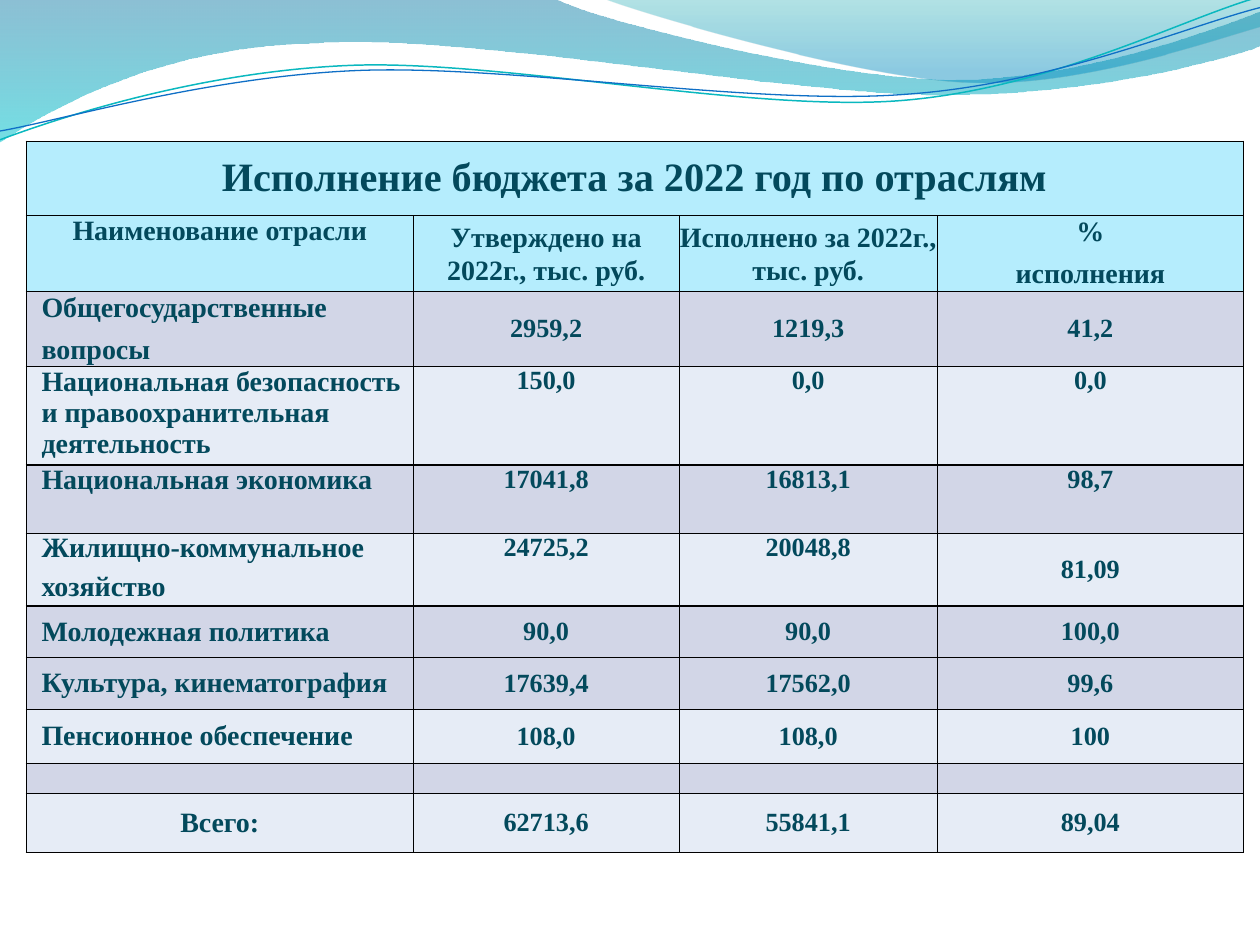
import math

from lxml import etree
from pptx import Presentation
from pptx import util as u
from pptx.dml.color import RGBColor
from pptx.enum import text
from pptx.oxml import ns

COLORS = {"ink": "03495C", "header": "B5EDFD", "dark": "D2D6E7", "light": "E6ECF6", "border": "000000"}
FONT = "Times New Roman"

WAVES = [
    {"box": (-0.01, -0.01, 10.02, 1.14), "start": (0, 0),
     "gradient": [(0, "0074A1", 45), (100, "00C6CF", 55)],
     "segments": [(4.4, -0.01), (4.76, 0.17, 6.64, 0.63, 7.58, 0.63), (8.53, 0.63, 9.58, 0.26, 10, 0.09),
                  (10.01, 0.36), (9.83, 0.44, 8.7, 0.76, 7.46, 0.75), (6.22, 0.75, 3.82, 0.28, 2.57, 0.34),
                  (1.29, 0.36, 0.46, 0.83, -0.01, 1.13), (0, 0)]},
    {"box": (4.79, -0.01, 5.21, 0.7), "start": (4.79, -0.01),
     "gradient": [(0, "00A1A9", 30), (80, "008BBF", 45)],
     "segments": [(5.09, 0.11, 6.82, 0.62, 7.69, 0.65), (8.56, 0.69, 9.61, 0.32, 10, 0.21),
                  (10, 0), (4.79, -0.01)]},
    {"box": (-0.02, 0.22, 10.02, 0.71), "start": (0, 1.11), "line": ("0AB8BF", 0.85), "rotation": -2.7,
     "segments": [(0.48, 0.93, 1.58, 0.57, 2.77, 0.52), (3.95, 0.47, 5.93, 0.89, 7.13, 0.8),
                  (8.33, 0.71, 9.38, 0.15, 9.98, -0.02)]},
    {"box": (-0.02, 0.3, 10.03, 0.58), "start": (0, 1.04), "line": ("0F6FC6", 0.75), "rotation": -2.7,
     "segments": [(0.47, 0.96, 1.64, 0.61, 2.83, 0.56), (4.03, 0.51, 5.97, 0.84, 7.17, 0.75),
                  (8.36, 0.67, 9.41, 0.21, 10, 0.06)]},
]

TABLE_BOX = (0.21, 1.12, 9.65, 5.74)
COLUMN_WIDTHS = [3.07, 2.11, 2.05, 2.43]
ROWS = [
    (0.59, "header", ["Исполнение бюджета за 2022 год по отраслям", "", "", ""]),
    (0.6, "header", ["Наименование отрасли", "Утверждено на 2022г., тыс. руб.",
                     "Исполнено за 2022г., тыс. руб.", "%\nисполнения"]),
    (0.6, "dark", ["Общегосударственные\nвопросы", "2959,2", "1219,3", "41,2"]),
    (0.78, "light", ["Национальная безопасность и правоохранительная деятельность", "150,0", "0,0", "0,0"]),
    (0.54, "dark", ["Национальная экономика", "17041,8", "16813,1", "98,7"]),
    (0.58, "light", ["Жилищно-коммунальное\nхозяйство", "24725,2", "20048,8", "81,09"]),
    (0.41, "dark", ["Молодежная политика", "90,0", "90,0", "100,0"]),
    (0.41, "dark", ["Культура, кинематография", "17639,4", "17562,0", "99,6"]),
    (0.43, "light", ["Пенсионное обеспечение", "108,0", "108,0", "100"]),
    (0.05, "dark", ["", "", "", ""]),
    (0.47, "light", ["Всего:", "62713,6", "55841,1", "89,04"]),
]
LAST_ROW, LAST_COLUMN = len(ROWS) - 1, len(COLUMN_WIDTHS) - 1
TOP_CELLS = {(1, 0)} | {(row, column) for row in (3, 4, 5) for column in range(4)} - {(5, 3)}
THICK_RULES = {4, 6, 7, len(ROWS)}
SPACE_AFTER = {1: 6.3, 2: 6.3, 5: 4.2}


def rgb(name):
    return RGBColor.from_string(COLORS.get(name, name))


def element(parent, tag, **attributes):
    return etree.SubElement(parent, ns.qn(tag), {key: str(value) for key, value in attributes.items()})


def local_points(numbers, box, rotation):
    left, top, width, height = box
    angle = math.radians(-rotation)
    for x, y in zip(numbers[::2], numbers[1::2]):
        dx, dy = x - left - width / 2, y - top - height / 2
        yield (u.Inches(width / 2 + dx * math.cos(angle) - dy * math.sin(angle)),
               u.Inches(height / 2 + dx * math.sin(angle) + dy * math.cos(angle)))


def draw_curves(shape, wave):
    box, rotation = wave["box"], wave.get("rotation", 0)
    outline = next(shape._element.iter(ns.qn("a:path")))
    for child in list(outline):
        outline.remove(child)
    for name, length in zip("wh", box[2:]):
        outline.set(name, str(u.Inches(length)))
    if "line" in wave:
        outline.set("fill", "none")
    commands = [("a:moveTo", wave["start"])]
    commands += [("a:lnTo" if len(segment) == 2 else "a:cubicBezTo", segment) for segment in wave["segments"]]
    for tag, numbers in commands:
        command = element(outline, tag)
        for x, y in local_points(numbers, box, rotation):
            element(command, "a:pt", x=x, y=y)
    if "gradient" in wave:
        element(outline, "a:close")


def add_wave(slide, wave):
    builder = slide.shapes.build_freeform(*map(u.Inches, wave["start"]))
    builder.add_line_segments([tuple(map(u.Inches, segment[-2:])) for segment in wave["segments"]], close=False)
    shape = builder.convert_to_shape()
    for name, length in zip(("left", "top", "width", "height"), wave["box"]):
        setattr(shape, name, u.Inches(length))
    shape.rotation = wave.get("rotation", 0)
    shape.shadow.inherit = False
    draw_curves(shape, wave)
    if "line" in wave:
        color, width = wave["line"]
        shape.fill.background()
        shape.line.color.rgb = rgb(color)
        shape.line.width = u.Pt(width)
        return
    shape.line.fill.background()
    shape.fill.gradient()
    gradient = shape._element.spPr.find(ns.qn("a:gradFill"))
    for child in list(gradient):
        gradient.remove(child)
    stops = element(gradient, "a:gsLst")
    for position, color, opacity in wave["gradient"]:
        stop = element(stops, "a:gs", pos=position * 1000)
        element(element(stop, "a:srgbClr", val=color), "a:alpha", val=opacity * 1000)
    element(gradient, "a:lin", ang=90 * 60000, scaled=0)


def add_borders(cell, row, column):
    thick = {"L": column == 0, "R": column == LAST_COLUMN or row == 0,
             "T": row in THICK_RULES, "B": row + 1 in THICK_RULES}
    for side, is_thick in thick.items():
        border = element(cell._tc.get_or_add_tcPr(), f"a:ln{side}", w=u.Pt(1 if is_thick else 0.5))
        element(element(border, "a:solidFill"), "a:srgbClr", val=COLORS["border"])


def fill_cell(cell, row, column, words, fill):
    add_borders(cell, row, column)
    cell.fill.solid()
    cell.fill.fore_color.rgb = rgb(fill)
    if not words:
        ending = element(cell.text_frame.paragraphs[0]._p, "a:endParaRPr", sz=900)
        element(ending, "a:latin", typeface=FONT)
        return
    anchor = text.MSO_ANCHOR.TOP if (row, column) in TOP_CELLS else text.MSO_ANCHOR.MIDDLE
    layout = {"margin_left": 0, "margin_right": 0, "margin_top": 0, "margin_bottom": 0, "vertical_anchor": anchor}
    for name, value in layout.items():
        setattr(cell, name, value)
    size = 23 if row == 0 else 16 if row == 1 or column == 0 else 15
    is_label = column == 0 and 1 < row < LAST_ROW
    cell.text = words
    paragraphs = cell.text_frame.paragraphs
    for paragraph in paragraphs:
        paragraph.alignment = text.PP_ALIGN.LEFT if is_label else text.PP_ALIGN.CENTER
        if is_label:
            paragraph._p.get_or_add_pPr().set("marL", str(u.Inches(0.12)))
        if row == 1 and column in (1, 2):
            paragraph.line_spacing = u.Pt(19.2)
        font = paragraph.runs[0].font
        for name, value in {"name": FONT, "size": u.Pt(size), "bold": True}.items():
            setattr(font, name, value)
        font.color.rgb = rgb("ink")
    for paragraph in paragraphs[:-1]:
        paragraph.space_after = u.Pt(SPACE_AFTER[row])


def add_budget_table(slide):
    frame = slide.shapes.add_table(len(ROWS), len(COLUMN_WIDTHS), *map(u.Inches, TABLE_BOX))
    table = frame.table
    table.first_row = table.horz_banding = False
    for column, width in zip(table.columns, COLUMN_WIDTHS):
        column.width = u.Inches(width)
    for row, (height, fill, cells) in enumerate(ROWS):
        table.rows[row].height = u.Inches(height)
        for column, words in enumerate(cells):
            fill_cell(table.cell(row, column), row, column, words, fill)
    table.cell(0, 0).merge(table.cell(0, LAST_COLUMN))
    frame.height = u.Inches(TABLE_BOX[3])


def main():
    presentation = Presentation()
    presentation.slide_width, presentation.slide_height = u.Inches(10), u.Inches(7.5)
    slide = presentation.slides.add_slide(presentation.slide_layouts[6])
    for wave in WAVES:
        add_wave(slide, wave)
    add_budget_table(slide)
    presentation.save("out.pptx")


if __name__ == "__main__":
    main()
